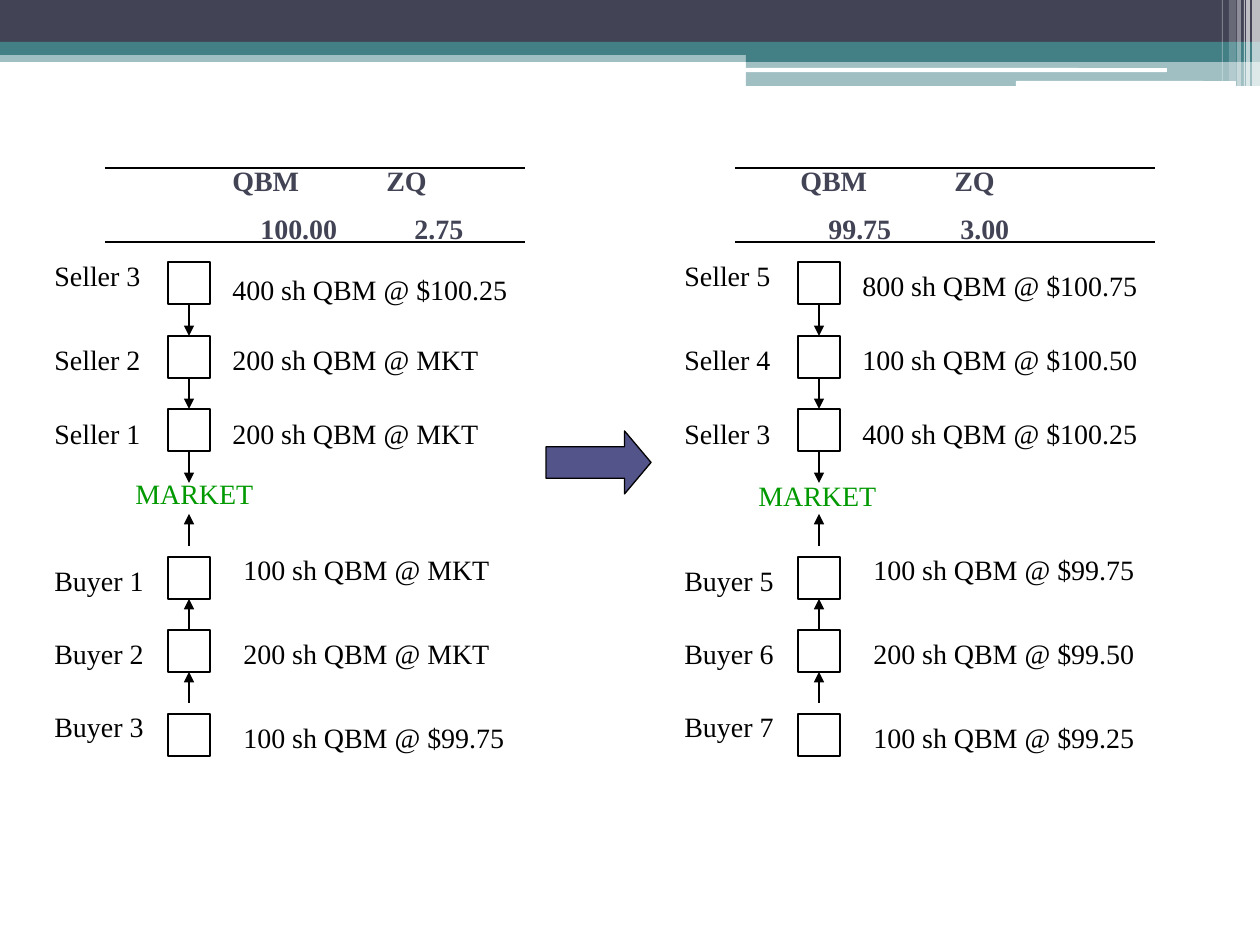
from lxml import etree
from pptx import Presentation
from pptx import util as u
from pptx.dml.color import RGBColor
from pptx.enum import shapes, text
from pptx.oxml import ns

SCALE = u.Inches(10) / 1260
FONT = "Times New Roman"
COLORS = {"ink": "000000", "paper": "FFFFFF", "slate": "424456", "teal": "438086",
          "violet": "53548A", "market": "009900"}
KIND = shapes.MSO_SHAPE

BANNER = [
    (KIND.RECTANGLE, 0, 50, 1260, 12, "teal", 50),
    (KIND.RECTANGLE, 0, 0, 1260, 42, "slate", 100),
    (KIND.RECTANGLE, 0, 42, 1260, 13, "teal", 100),
    (KIND.RECTANGLE, 746, 49, 514, 13, "teal", 100),
    (KIND.RECTANGLE, 746, 61, 514, 25, "teal", 50),
    (KIND.ROUNDED_RECTANGLE, 745, 68, 422, 4, "paper", 100),
    (KIND.ROUNDED_RECTANGLE, 1016, 81, 220, 5, "paper", 100),
    (KIND.RECTANGLE, 1252, 0, 8, 86, "paper", 65),
    (KIND.RECTANGLE, 1246, 0, 4, 86, "paper", 65),
    (KIND.RECTANGLE, 1244, 0, 1, 86, "paper", 60),
    (KIND.RECTANGLE, 1237, 0, 4, 86, "paper", 40),
    (KIND.RECTANGLE, 1229, 0, 7, 81, "paper", 20),
    (KIND.RECTANGLE, 1222, 0, 1, 81, "paper", 30),
]

BOX_TOPS = [105, 179, 252, 400, 473, 557]
LABEL_TOPS = [95, 179, 253, 400, 473, 546]
ORDER_TOPS = [105, 179, 253, 389, 473, 557]
ARROWS = [(147, 179, 0, 1), (221, 252, 1, 2), (294, 326, 2, None),
          (473, 442, 4, 3), (389, 357, None, None), (546, 515, None, 4)]

BEFORE = {
    "header": (178, ["\t100.00\t2.75", 28, 182]),
    "market": (81, 313),
    "first_order_drop": 4,
    "queue": [("Seller 3", "400 sh QBM @ $100.25"), ("Seller 2", "200 sh QBM @ MKT"),
              ("Seller 1", "200 sh QBM @ MKT"), ("Buyer 1", "100 sh QBM @ MKT"),
              ("Buyer 2", "200 sh QBM @ MKT"), ("Buyer 3", "100 sh QBM @ $99.75")],
}
AFTER = {
    "header": (116, ["\t99.75\t3.00", 28, 160]),
    "market": (74, 315),
    "first_order_drop": 0,
    "queue": [("Seller 5", "800 sh QBM @ $100.75"), ("Seller 4", "100 sh QBM @ $100.50"),
              ("Seller 3", "400 sh QBM @ $100.25"), ("Buyer 5", "100 sh QBM @ $99.75"),
              ("Buyer 6", "200 sh QBM @ $99.50"), ("Buyer 7", "100 sh QBM @ $99.25")],
}


def px(length):
    """Turn a length in px into EMU."""
    return u.Emu(round(length * SCALE))


def rgb(name):
    """Look up a named colour."""
    return RGBColor.from_string(COLORS[name])


def add_block(slide, kind, left, top, width, height, fill, opacity=100, outlined=False):
    """Add a flat preset shape with an optional thin outline."""
    block = slide.shapes.add_shape(kind, px(left), px(top), px(width), px(height))
    block.shadow.inherit = False
    block.fill.solid()
    block.fill.fore_color.rgb = rgb(fill)
    if opacity < 100:
        tint = block._element.spPr.find(".//" + ns.qn("a:srgbClr"))
        etree.SubElement(tint, ns.qn("a:alpha"), val=str(opacity * 1000))
    if outlined:
        block.line.color.rgb = rgb("ink")
        block.line.width = u.Pt(0.75)
    else:
        block.line.fill.background()
    return block


def add_line(slide, x1, y1, x2, y2, arrow=False):
    """Add a thin straight line, with an arrowhead at its end if asked."""
    line = slide.shapes.add_connector(
        shapes.MSO_CONNECTOR.STRAIGHT, px(x1), px(y1), px(x2), px(y2))
    line.line.color.rgb = rgb("ink")
    line.line.width = u.Pt(0.75)
    if arrow:
        stroke = line._element.spPr.find(ns.qn("a:ln"))
        etree.SubElement(stroke, ns.qn("a:tailEnd"), type="triangle")
    etree.SubElement(line._element.spPr, ns.qn("a:effectLst"))
    return line


def add_words(slide, left, top, width, height, lines, color="ink", bold=False):
    """Add a text box holding one paragraph for each line."""
    box = slide.shapes.add_textbox(px(left), px(top), px(width), px(height))
    frame = box.text_frame
    frame.word_wrap = True
    frame.auto_size = text.MSO_AUTO_SIZE.SHAPE_TO_FIT_TEXT
    frame.text = "\n".join(lines)
    for paragraph in frame.paragraphs:
        paragraph.font.name = FONT
        paragraph.font.size = u.Pt(16)
        paragraph.font.bold = bold
        paragraph.font.color.rgb = rgb(color)
    return frame


def set_tabs(paragraph, stops):
    """Give a paragraph left tab stops measured in px."""
    tabs = etree.Element(ns.qn("a:tabLst"))
    for stop in stops:
        etree.SubElement(tabs, ns.qn("a:tab"), pos=str(px(stop)), algn="l")
    paragraph._p.get_or_add_pPr().find(ns.qn("a:defRPr")).addprevious(tabs)


def draw_banner(slide):
    """Draw the coloured bands and stripes along the top edge."""
    for kind, left, top, width, height, fill, opacity in BANNER:
        add_block(slide, kind, left, top, width, height, fill, opacity)


def draw_quotes(slide, left, top, prices, stops):
    """Write the ticker row above its price row."""
    frame = add_words(slide, left, top, 294, 97, ["QBM\tZQ", prices], "slate", True)
    tickers, quotes = frame.paragraphs
    set_tabs(tickers, [154])
    set_tabs(quotes, stops)
    quotes.space_before = u.Pt(8.5)


def draw_order_book(slide, left, top, book):
    """Draw one order book: quotes, queue of traders and market."""
    for rule in (11, 85):
        add_line(slide, left + 63, top + rule, left + 483, top + rule)
    header_left, (prices, *stops) = book["header"]
    draw_quotes(slide, left + header_left, top, prices, stops)

    squares = [add_block(slide, KIND.RECTANGLE, left + 126, top + y, 42, 42,
                         "paper", outlined=True) for y in BOX_TOPS]
    for start, end, source, target in ARROWS:
        arrow = add_line(slide, left + 147, top + start, left + 147, top + end, True)
        downward = end > start
        if source is not None:
            arrow.begin_connect(squares[source], 2 if downward else 0)
        if target is not None:
            arrow.end_connect(squares[target], 0 if downward else 2)

    for rank, (trader, order) in enumerate(book["queue"]):
        drop = book["first_order_drop"] if rank == 0 else 0
        indent = 178 if rank < 3 else 189
        add_words(slide, left, top + LABEL_TOPS[rank], 126, 47, [trader])
        add_words(slide, left + indent, top + ORDER_TOPS[rank] + drop, 368, 47, [order])

    market_left, market_top = book["market"]
    add_words(slide, left + market_left, top + market_top, 150, 47, ["MARKET"], "market")


def main():
    """Build the slide and save it."""
    deck = Presentation()
    deck.slide_width, deck.slide_height = px(1260), px(945)
    slide = deck.slides.add_slide(deck.slide_layouts[6])
    draw_banner(slide)
    draw_order_book(slide, 42, 157, BEFORE)
    draw_order_book(slide, 672, 157, AFTER)
    step = add_block(slide, KIND.RIGHT_ARROW, 546, 431, 105, 63, "violet", outlined=True)
    step.adjustments[1] = 0.42
    deck.save("out.pptx")


if __name__ == "__main__":
    main()
